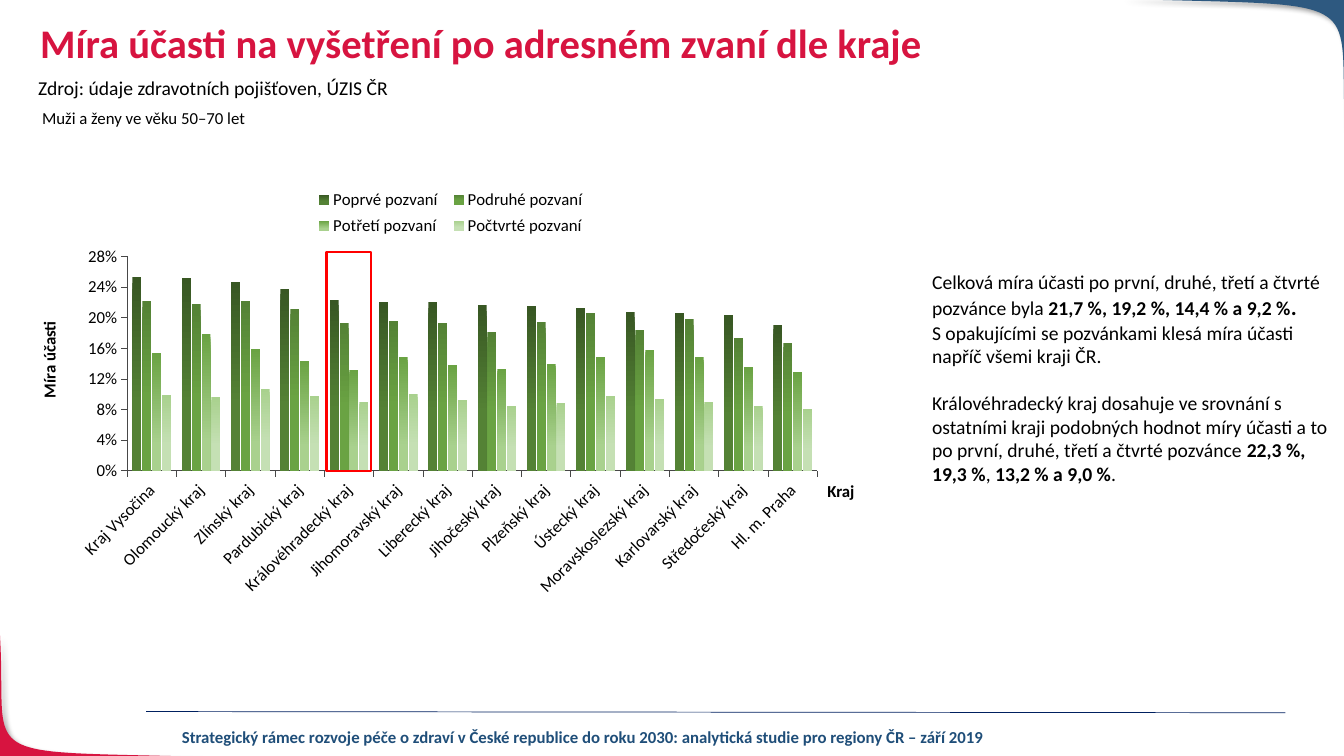
from typing import NamedTuple

from lxml.etree import SubElement
from pptx import Presentation
from pptx.chart.data import CategoryChartData
from pptx.dml.color import RGBColor
from pptx.enum.chart import XL_CHART_TYPE, XL_LEGEND_POSITION, XL_TICK_MARK
from pptx.enum.shapes import MSO_CONNECTOR, MSO_SHAPE
from pptx.enum.text import MSO_ANCHOR, PP_ALIGN
from pptx.oxml import parse_xml
from pptx.oxml.ns import nsdecls, qn
from pptx.util import Cm, Pt

FONT = "Calibri"
BLACK = RGBColor(0x00, 0x00, 0x00)
CRIMSON = RGBColor(0xD7, 0x14, 0x40)
STEEL_BLUE = RGBColor(0x2E, 0x59, 0x80)
FOOTER_BLUE = RGBColor(0x1F, 0x4E, 0x79)
NAVY = RGBColor(0x00, 0x20, 0x60)
RED = RGBColor(0xFF, 0x00, 0x00)
AXIS_GREY = RGBColor(0x47, 0x47, 0x47)
FOREST = RGBColor(0x38, 0x57, 0x23)
GREEN = RGBColor(0x54, 0x82, 0x35)
LEAF = RGBColor(0x6A, 0xA3, 0x43)
LIGHT_GREEN = RGBColor(0xA9, 0xD1, 0x8E)
PALE_GREEN = RGBColor(0xC5, 0xE0, 0xB4)


class Box(NamedTuple):
    left: float
    top: float
    width: float
    height: float

    def emu(self) -> list:
        return [Cm(length) for length in self]


class Run(NamedTuple):
    text: str
    bold: bool = False
    size: float = 14


class Corner(NamedTuple):
    curve: tuple
    tip: tuple
    color: RGBColor


class Invitation(NamedTuple):
    name: str
    percents: tuple
    top_color: RGBColor
    bottom_color: RGBColor
    fade_end: float


CORNERS = (
    Corner(((5.41, 19.08), (-0.86, 18.9), (0.2, 19.28), (0, 16)), (-0.03, 19.08), CRIMSON),
    Corner(((28.22, -0.03), (34.8, 0.18), (33.68, -0.25), (33.91, 3.61)), (33.91, -0.03), STEEL_BLUE),
)
REGIONS = (
    "Kraj Vysočina", "Olomoucký kraj", "Zlínský kraj", "Pardubický kraj", "Královéhradecký kraj",
    "Jihomoravský kraj", "Liberecký kraj", "Jihočeský kraj", "Plzeňský kraj", "Ústecký kraj",
    "Moravskoslezský kraj", "Karlovarský kraj", "Středočeský kraj", "Hl. m. Praha",
)
INVITATIONS = (
    Invitation("Poprvé pozvaní", (25.3, 25.2, 24.7, 23.8, 22.3, 22, 22, 21.6, 21.5, 21.3, 20.7, 20.6, 20.3, 19.1),
               FOREST, GREEN, 0.65),
    Invitation("Podruhé pozvaní", (22.2, 21.8, 22.2, 21.2, 19.3, 19.6, 19.3, 18.1, 19.4, 20.6, 18.4, 19.8, 17.3, 16.7),
               GREEN, LEAF, 0.57),
    Invitation("Potřetí pozvaní", (15.4, 17.9, 15.9, 14.4, 13.2, 14.8, 13.8, 13.3, 14, 14.8, 15.8, 14.8, 13.5, 12.9),
               LEAF, LIGHT_GREEN, 0.78),
    Invitation("Počtvrté pozvaní", (9.9, 9.6, 10.7, 9.8, 9, 10, 9.3, 8.5, 8.9, 9.8, 9.4, 9, 8.5, 8.1),
               LIGHT_GREEN, PALE_GREEN, 0.66),
)
COMMENTARY = (
    (Run("Celková míra účasti po první, druhé, třetí a čtvrté pozvánce byla "),
     Run("21,7 %, 19,2 %, 14,4 % a 9,2 %", True), Run(".", True, 16)),
    (Run("S opakujícími se pozvánkami klesá míra účasti napříč všemi kraji ČR."),),
    (Run("Královéhradecký kraj dosahuje ve srovnání s ostatními kraji podobných hodnot míry účasti "
         "a to po první, druhé, třetí a čtvrté pozvánce "),
     Run("22,3 %, 19,3 %", True), Run(", "), Run("13,2 % a 9,0 %", True), Run(".")),
)


def style_font(font, size: float, bold: bool = False, color: RGBColor = BLACK) -> None:
    font.name, font.size, font.bold = FONT, Pt(size), bold
    font.color.rgb = color


def write(shape, paragraphs, *, color: RGBColor = BLACK, align=PP_ALIGN.LEFT, gaps=None, line_spacing=None) -> None:
    """Fill a shape with paragraphs of runs; gaps maps a paragraph index to its space before in points."""
    frame = shape.text_frame
    frame.word_wrap = True
    frame.vertical_anchor = MSO_ANCHOR.TOP
    for index, runs in enumerate(paragraphs):
        paragraph = frame.add_paragraph() if index else frame.paragraphs[0]
        paragraph.alignment = align
        if line_spacing:
            paragraph.line_spacing = line_spacing
        if gaps and index in gaps:
            paragraph.space_before = Pt(gaps[index])
        for part in runs:
            run = paragraph.add_run()
            run.text = part.text
            style_font(run.font, part.size, part.bold, color)


def add_text(slide, box: Box, *paragraphs, rotation: float = 0, **text_format) -> None:
    label = slide.shapes.add_textbox(*box.emu())
    label.rotation = rotation
    write(label, paragraphs, **text_format)


def bezier(curve: tuple, t: float) -> tuple:
    weights = ((1 - t) ** 3, 3 * t * (1 - t) ** 2, 3 * t ** 2 * (1 - t), t ** 3)
    return tuple(Cm(sum(w * point[axis] for w, point in zip(weights, curve))) for axis in (0, 1))


def add_corner(slide, corner: Corner, steps: int = 40) -> None:
    start, *rest = [bezier(corner.curve, i / steps) for i in range(steps + 1)]
    builder = slide.shapes.build_freeform(*start)
    builder.add_line_segments([*rest, tuple(Cm(length) for length in corner.tip)], close=True)
    shape = builder.convert_to_shape()
    shape.fill.solid()
    shape.fill.fore_color.rgb = corner.color
    shape.line.fill.background()
    shape.element.spPr.append(parse_xml(
        f'<a:effectLst {nsdecls("a")}><a:outerShdw blurRad="{Pt(4)}" dist="{Pt(3)}" dir="2700000">'
        '<a:srgbClr val="000000"><a:alpha val="40000"/></a:srgbClr></a:outerShdw></a:effectLst>'))


def place(element, x: float, y: float, width: float, height: float, inner: bool = False) -> None:
    """Give a chart part a manual layout in fractions of the chart."""
    for old in element.findall(qn("c:layout")):
        element.remove(old)
    layout = parse_xml(f'<c:layout {nsdecls("c")}><c:manualLayout/></c:layout>')
    settings = [("layoutTarget", "inner")] if inner else []
    settings += [("xMode", "edge"), ("yMode", "edge"), ("x", x), ("y", y), ("w", width), ("h", height)]
    for tag, value in settings:
        SubElement(layout[0], qn(f"c:{tag}")).set("val", str(value))
    element.insert(1 if element.tag == qn("c:legend") else 0, layout)


def add_participation_chart(slide, box: Box) -> None:
    data = CategoryChartData(number_format="0%")
    data.categories = REGIONS
    for invitation in INVITATIONS:
        data.add_series(invitation.name, [round(percent / 100, 3) for percent in invitation.percents])
    chart = slide.shapes.add_chart(XL_CHART_TYPE.COLUMN_CLUSTERED, *box.emu(), data).chart
    style_font(chart.font, 10)
    chart.has_title = False

    chart.has_legend = True
    legend = chart.legend
    legend.position = XL_LEGEND_POSITION.BOTTOM
    legend.include_in_layout = False
    style_font(legend.font, 12)
    place(legend._element, 0.32, 0.03, 0.37, 0.12)

    for axis in (chart.category_axis, chart.value_axis):
        axis.major_tick_mark = XL_TICK_MARK.OUTSIDE
        axis.has_major_gridlines = False
        axis.format.line.color.rgb = AXIS_GREY
        axis.format.line.width = Pt(0.5)
        style_font(axis.tick_labels.font, 12)
    chart.category_axis._element.find(qn("c:txPr")).find(qn("a:bodyPr")).set("rot", "-2700000")
    rate_axis = chart.value_axis
    rate_axis.minimum_scale, rate_axis.maximum_scale, rate_axis.major_unit = 0, 0.28, 0.04
    rate_axis.tick_labels.number_format = "0%"
    rate_axis.tick_labels.number_format_is_linked = False

    plot = chart.plots[0]
    plot.gap_width, plot.overlap, plot.vary_by_categories = 120, -10, False
    place(chart._chartSpace.chart.plotArea, 0.083, 0.18, 0.9, 0.443, inner=True)
    for series, invitation in zip(plot.series, INVITATIONS):
        fill = series.format.fill
        fill.gradient()
        fill.gradient_angle = 270
        top, bottom = fill.gradient_stops
        top.color.rgb, top.position = invitation.top_color, 0
        bottom.color.rgb, bottom.position = invitation.bottom_color, invitation.fade_end


def add_footer(slide) -> None:
    rule = slide.shapes.add_connector(MSO_CONNECTOR.STRAIGHT, Cm(3.68), Cm(17.93), Cm(32.39), Cm(17.96))
    rule.line.color.rgb = NAVY
    rule.line.width = Pt(0.5)
    SubElement(rule._element.spPr, qn("a:effectLst"))
    study = "Strategický rámec rozvoje péče o zdraví v České republice do roku 2030: analytická studie pro regiony ČR – září 2019"
    add_text(slide, Box(3.99, 18.19, 21.41, 0.76), [Run(study, True, 12)], color=FOOTER_BLUE, align=PP_ALIGN.CENTER)


def add_region_highlight(slide, box: Box) -> None:
    frame = slide.shapes.add_shape(MSO_SHAPE.RECTANGLE, *box.emu())
    frame.shadow.inherit = False
    frame.fill.background()
    frame.line.color.rgb = RED
    frame.line.width = Pt(1.5)


def main() -> None:
    deck = Presentation()
    deck.slide_width, deck.slide_height = Cm(33.87), Cm(19.05)
    slide = deck.slides.add_slide(deck.slide_layouts[5])
    title = slide.shapes.title
    title.left, title.top, title.width, title.height = Box(0.76, 0.46, 29.21, 1.75).emu()
    write(title, [[Run("Míra účasti na vyšetření po adresném zvaní dle kraje", True, 29)]],
          color=CRIMSON, line_spacing=0.9)
    for corner in CORNERS:
        add_corner(slide, corner)
    add_footer(slide)
    add_participation_chart(slide, Box(1.6, 4.27, 19.33, 12.19))
    add_text(slide, Box(0.71, 1.8, 21.51, 0.86), [Run("Zdroj: údaje zdravotních pojišťoven, ÚZIS ČR")])
    add_text(slide, Box(0.81, 2.59, 18.64, 0.76), [Run("Muži a ženy ve věku 50–70 let", size=12)])
    add_text(slide, Box(-1.42, 8.61, 5.46, 0.91), [Run("Míra účasti", True, 12)],
             rotation=270, align=PP_ALIGN.CENTER)
    add_region_highlight(slide, Box(8.23, 6.35, 1.12, 5.51))
    add_text(slide, Box(20.6, 11.99, 2.74, 0.71), [Run("Kraj", True, 12)])
    add_text(slide, Box(23.24, 6.68, 10.62, 5.74), *COMMENTARY, gaps={2: 17})
    deck.save("out.pptx")


if __name__ == "__main__":
    main()
